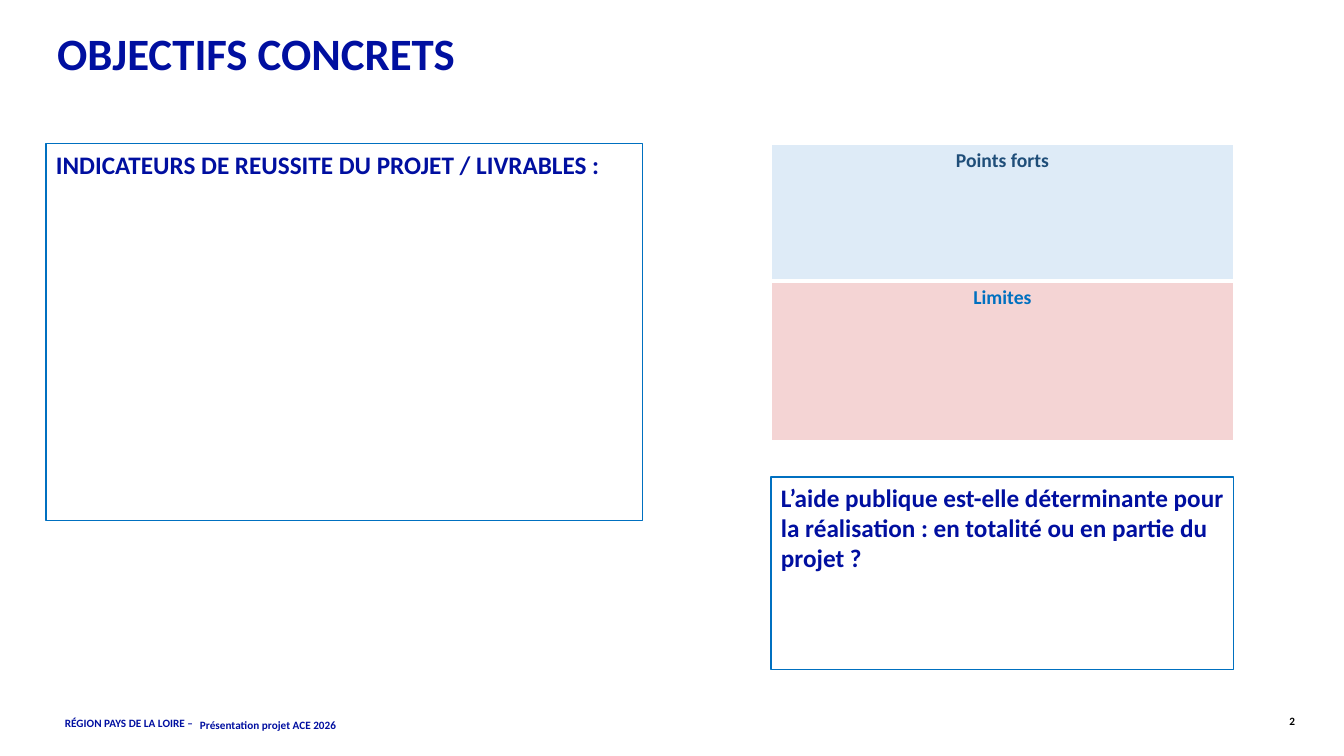
"""Builds the project objectives slide."""
import dataclasses

import lxml.etree
import pptx
import pptx.dml.color
import pptx.enum.shapes
import pptx.enum.text
import pptx.oxml.ns
import pptx.util

ALIGN = pptx.enum.text.PP_ALIGN
PX = 914400 / 100.8


@dataclasses.dataclass(frozen=True)
class Theme:
    font: str = "Calibri"
    navy: str = "000FA0"
    blue: str = "0070C0"
    slate: str = "1F4E79"
    pale: str = "DEEBF7"
    red: str = "C00000"
    black: str = "000000"
    white: str = "FFFFFF"
    title: int = 32
    heading: int = 18
    cell: int = 14
    small: int = 8


THEME = Theme()

SLIDE = (1344, 756)
TITLE = ("OBJECTIFS CONCRETS", (47, 46, 1285, 64))
PANELS = [
    ("INDICATEURS DE REUSSITE DU PROJET / LIVRABLES :", (46, 144, 597, 377)),
    ("L’aide publique est-elle déterminante pour la réalisation : "
     "en totalité ou en partie du projet ?", (771, 477, 463, 193)),
]
TABLE_BOX = (771, 144, 463, 297)
ROWS = [
    {"text": "Points forts", "height": 137, "color": THEME.slate,
     "fill": THEME.pale, "opacity": 100, "bottom": 3},
    {"text": "Limites", "height": 160, "color": THEME.blue,
     "fill": THEME.red, "opacity": 17, "bottom": 1},
]
FOOTERS = [
    ("RÉGION PAYS DE LA LOIRE –", (55, 711, 150, 24), THEME.navy, ALIGN.LEFT, None),
    ("Présentation projet ACE 2026", (190, 704, 500, 30), THEME.navy, ALIGN.LEFT, 16),
    ("2", (1078, 709, 227, 30), THEME.black, ALIGN.RIGHT, None),
]


def emu(px):
    return pptx.util.Emu(round(px * PX))


def box(px):
    return [emu(n) for n in px]


def rgb(value):
    return pptx.dml.color.RGBColor.from_string(value)


def write(tf, text, size, color, align=ALIGN.LEFT, leading=None):
    tf.word_wrap = True
    tf.vertical_anchor = pptx.enum.text.MSO_ANCHOR.TOP
    p = tf.paragraphs[0]
    p.text = text
    p.alignment = align
    if leading:
        p.line_spacing = pptx.util.Pt(leading)
    p.font.name = THEME.font
    p.font.size = pptx.util.Pt(size)
    p.font.bold = True
    p.font.color.rgb = rgb(color)


def add_xml(parent, tag, **attrs):
    return lxml.etree.SubElement(parent, pptx.oxml.ns.qn(tag), attrs)


def add_borders(cell, bottom):
    tc_pr = cell._tc.get_or_add_tcPr()
    for i, (side, width) in enumerate(zip("LRTB", (1, 1, 1, bottom))):
        ln = add_xml(tc_pr, f"a:ln{side}", w=str(pptx.util.Pt(width)))
        add_xml(add_xml(ln, "a:solidFill"), "a:srgbClr", val=THEME.white)
        tc_pr.insert(i, ln)


def add_strengths_table(s):
    table = s.shapes.add_table(len(ROWS), 1, *box(TABLE_BOX)).table
    table.first_row = table.horz_banding = False
    for i, row in enumerate(ROWS):
        table.rows[i].height = emu(row["height"])
        cell = table.cell(i, 0)
        write(cell.text_frame, row["text"], THEME.cell, row["color"], ALIGN.CENTER)
        cell.fill.solid()
        cell.fill.fore_color.rgb = rgb(row["fill"])
        if row["opacity"] < 100:
            color = cell._tc.tcPr.find(".//" + pptx.oxml.ns.qn("a:srgbClr"))
            add_xml(color, "a:alpha", val=str(row["opacity"] * 1000))
        add_borders(cell, row["bottom"])


def main():
    prs = pptx.Presentation()
    prs.slide_width, prs.slide_height = box(SLIDE)
    s = prs.slides.add_slide(prs.slide_layouts[5])

    text, place = TITLE
    title = s.shapes.title
    title.left, title.top, title.width, title.height = box(place)
    write(title.text_frame, text, THEME.title, THEME.navy, leading=20)

    for text, place, color, align, leading in FOOTERS:
        tf = s.shapes.add_textbox(*box(place)).text_frame
        write(tf, text, THEME.small, color, align, leading)

    add_strengths_table(s)

    for text, place in PANELS:
        sp = s.shapes.add_shape(pptx.enum.shapes.MSO_SHAPE.RECTANGLE, *box(place))
        sp.shadow.inherit = False
        sp.fill.background()
        sp.line.color.rgb = rgb(THEME.blue)
        sp.line.width = pptx.util.Pt(0.75)
        write(sp.text_frame, text, THEME.heading, THEME.navy)

    prs.save("out.pptx")


if __name__ == "__main__":
    main()
